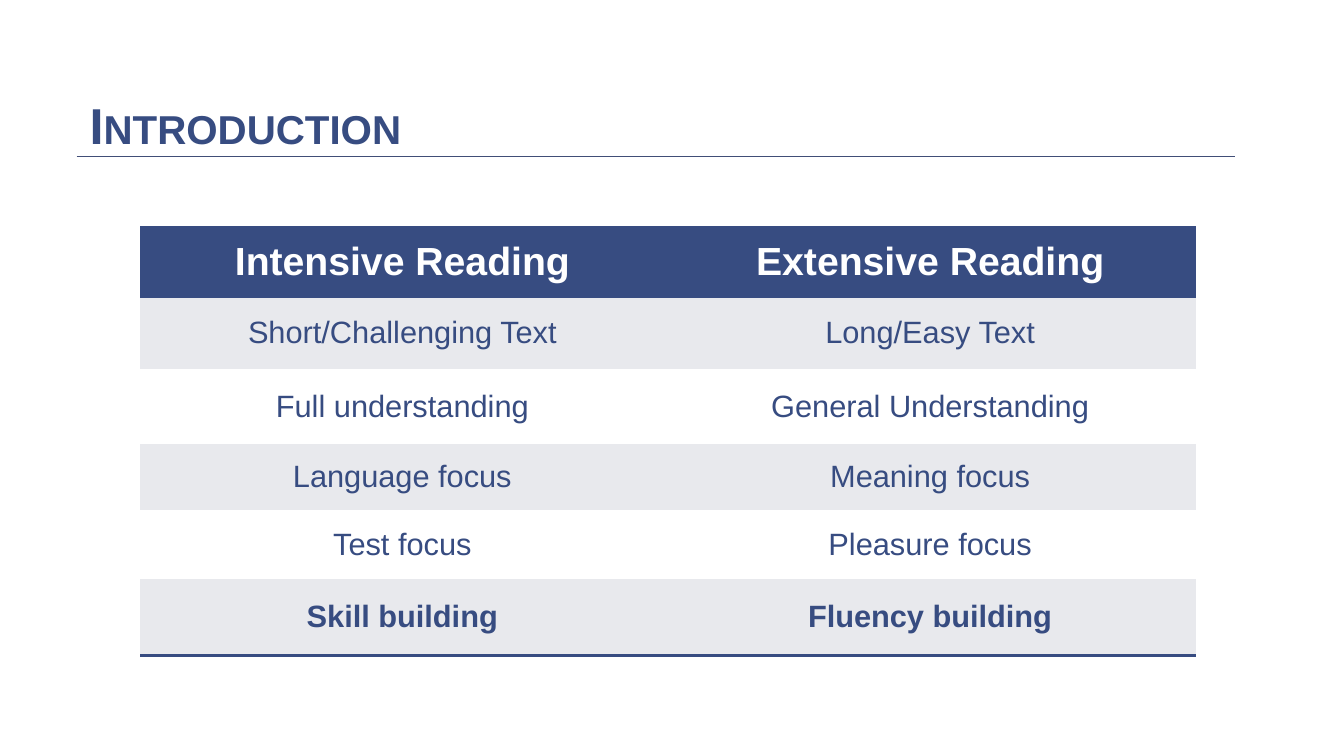
import pptx
import pptx.dml.color
import pptx.enum.shapes
import pptx.enum.text
import pptx.oxml.ns
import pptx.util
from lxml import etree
from pptx.util import Cm

NAVY, WHITE, GREY, RULE = "374C81", "FFFFFF", "E8E9ED", "414E77"
NO_STYLE = "{2D5ABB26-0587-4C30-8999-92F81FD0307C}"
ROWS = [
    ("Intensive Reading", "Extensive Reading"),
    ("Short/Challenging Text", "Long/Easy Text"),
    ("Full understanding", "General Understanding"),
    ("Language focus", "Meaning focus"),
    ("Test focus", "Pleasure focus"),
    ("Skill building", "Fluency building"),
]
COLUMN_WIDTHS = [13.2, 13.4]
ROW_HEIGHTS = [1.75, 1.83, 1.88, 1.68, 1.73, 1.93]


def color(hex_code):
    return pptx.dml.color.RGBColor.from_string(hex_code)


def set_values(target, values):
    for name, value in values.items():
        setattr(target, name, value)


def add_xml(parent, tag, **attributes):
    return etree.SubElement(parent, pptx.oxml.ns.qn(tag), attributes)


def format_font(font, size, hex_code, bold):
    set_values(font, {"name": "Arial", "size": pptx.util.Pt(size), "bold": bold})
    font.color.rgb = color(hex_code)


def add_title(page, text, left, top, width, height):
    box = page.shapes.add_textbox(Cm(left), Cm(top), Cm(width), Cm(height))
    set_values(box.text_frame, {
        "word_wrap": True,
        "vertical_anchor": pptx.enum.text.MSO_ANCHOR.BOTTOM,
        "margin_left": Cm(0.33), "margin_right": Cm(0.33),
        "margin_top": Cm(0.18), "margin_bottom": Cm(0.18),
    })
    para = box.text_frame.paragraphs[0]
    para.line_spacing = 0.85
    span = para.add_run()
    span.text = text
    format_font(span.font, 36, NAVY, True)
    span._r.get_or_add_rPr().set("cap", "small")

    rule_top = Cm(top + height - 0.15)
    rule = page.shapes.add_connector(
        pptx.enum.shapes.MSO_CONNECTOR.STRAIGHT,
        Cm(left), rule_top, Cm(left + 29.2), rule_top)
    rule.line.width = pptx.util.Pt(0.5)
    rule.line.color.rgb = color(RULE)
    add_xml(rule._element.spPr, "a:effectLst")


def add_border(cell, side):
    border = add_xml(cell._tc.get_or_add_tcPr(), side, w=str(pptx.util.Pt(2)))
    add_xml(add_xml(border, "a:solidFill"), "a:srgbClr", val=NAVY)


def fill_cell(cell, text, row):
    header, last = row == 0, row == len(ROWS) - 1
    if header:
        add_border(cell, "a:lnT")
    if header or last:
        add_border(cell, "a:lnB")
    cell.fill.solid()
    cell.fill.fore_color.rgb = color(NAVY if header else GREY if row % 2 else WHITE)
    cell.vertical_anchor = pptx.enum.text.MSO_ANCHOR.MIDDLE
    para = cell.text_frame.paragraphs[0]
    para.alignment = pptx.enum.text.PP_ALIGN.CENTER
    span = para.add_run()
    span.text = text
    format_font(span.font, 28 if header else 22, WHITE if header else NAVY, header or last)


def add_comparison(page, left, top):
    frame = page.shapes.add_table(
        len(ROWS), len(COLUMN_WIDTHS), Cm(left), Cm(top),
        Cm(sum(COLUMN_WIDTHS)), Cm(sum(ROW_HEIGHTS)))
    table = frame.table
    table._tbl.tblPr.find(pptx.oxml.ns.qn("a:tableStyleId")).text = NO_STYLE
    for column, width in zip(table.columns, COLUMN_WIDTHS):
        column.width = Cm(width)
    for row, (texts, height) in enumerate(zip(ROWS, ROW_HEIGHTS)):
        table.rows[row].height = Cm(height)
        for column, text in enumerate(texts):
            fill_cell(table.cell(row, column), text, row)


def main():
    deck = pptx.Presentation()
    set_values(deck, {"slide_width": Cm(33.87), "slide_height": Cm(19.05)})
    page = deck.slides.add_slide(deck.slide_layouts[6])
    add_title(page, "Introduction", 1.93, 1.52, 27.2, 2.57)
    add_comparison(page, 3.54, 5.72)
    deck.save("out.pptx")


if __name__ == "__main__":
    main()
